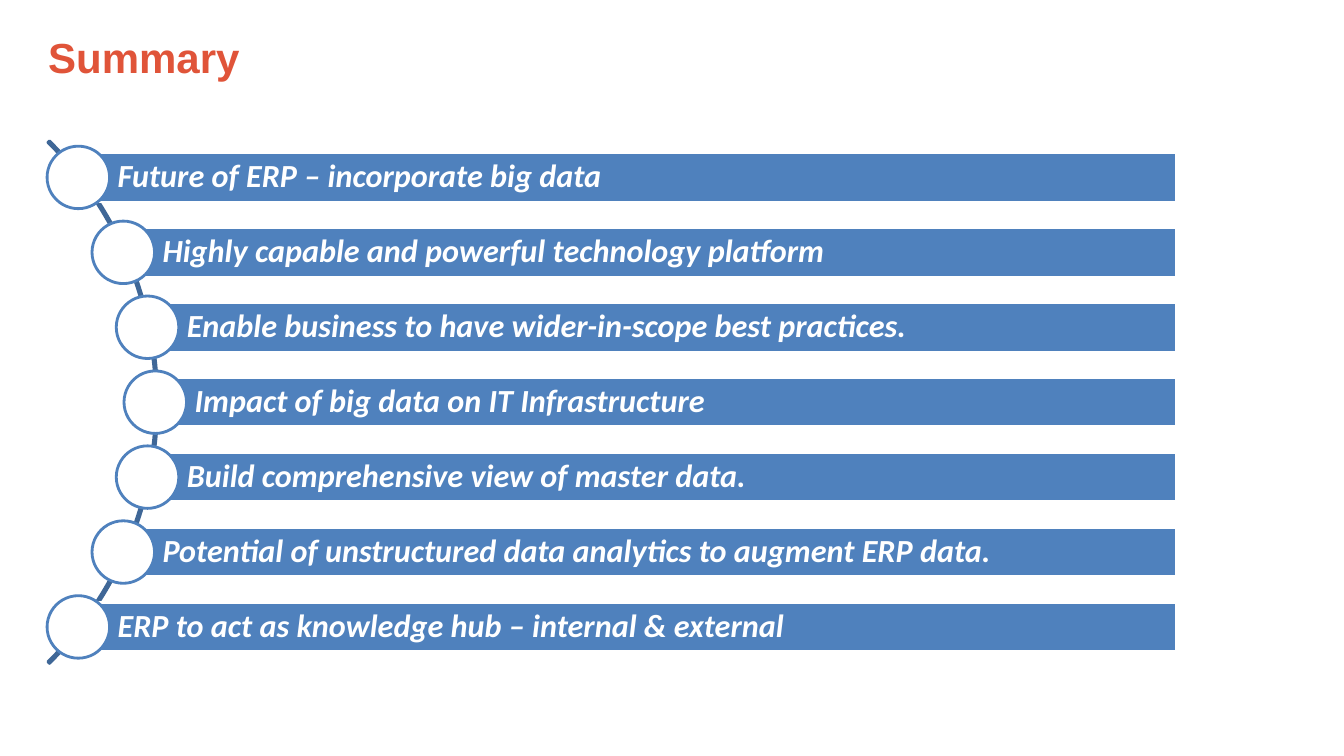
import math

import pptx
import pptx.dml.color
import pptx.enum.shapes
import pptx.enum.text
import pptx.util

Inches = pptx.util.Inches
Pt = pptx.util.Pt
MSO_SHAPE = pptx.enum.shapes.MSO_SHAPE

COLORS = {"title": "E05439", "bar": "4F81BD", "arc": "3F6797", "white": "FFFFFF"}

POINTS = [
    "Future of ERP – incorporate big data",
    "Highly capable and powerful technology platform",
    "Enable business to have wider-in-scope best practices.",
    "Impact of big data on IT Infrastructure",
    "Build comprehensive view of master data.",
    "Potential of unstructured data analytics to augment ERP data.",
    "ERP to act as knowledge hub – internal & external",
]

ARC_X, ARC_Y = -2.1, 3.99
ARC_SIZE = 7.33
MARKER_RADIUS = 3.64  # distance of the circle centers from the arc center
PITCH = 4.46 / (len(POINTS) - 1)
BAR_RIGHT, BAR_HEIGHT = 11.67, 0.49
CIRCLE_SIZE = 0.62


def rgb(name):
    return pptx.dml.color.RGBColor.from_string(COLORS[name])


def write_text(frame, text, *, font, size, color, italic=False,
               insets=(0.1, 0.05, 0.1, 0.05), line_spacing=1.0):
    frame.word_wrap = True
    frame.vertical_anchor = pptx.enum.text.MSO_ANCHOR.MIDDLE
    (frame.margin_left, frame.margin_top,
     frame.margin_right, frame.margin_bottom) = map(Inches, insets)
    paragraph = frame.paragraphs[0]
    paragraph.alignment = pptx.enum.text.PP_ALIGN.LEFT
    paragraph.line_spacing = line_spacing
    run = paragraph.add_run()
    run.text = text
    run.font.name = font
    run.font.size = Pt(size)
    run.font.bold = True
    run.font.italic = italic
    run.font.color.rgb = rgb(color)


def add_outlined(slide, kind, left, top, width, height, *, line, fill=None):
    shape = slide.shapes.add_shape(
        kind, Inches(left), Inches(top), Inches(width), Inches(height))
    shape.shadow.inherit = False
    if fill:
        shape.fill.solid()
        shape.fill.fore_color.rgb = rgb(fill)
    else:
        shape.fill.background()
    shape.line.color.rgb = rgb(line)
    shape.line.width = Pt(2)
    return shape


def add_title(slide, text):
    title = slide.shapes.add_textbox(Inches(0.38), 0, Inches(9.71), Inches(1.13))
    write_text(title.text_frame, text, font="Arial", size=30, color="title")


def add_arc(slide):
    arc = add_outlined(slide, MSO_SHAPE.BLOCK_ARC, ARC_X - ARC_SIZE / 2,
                       ARC_Y - ARC_SIZE / 2, ARC_SIZE, ARC_SIZE, line="arc")
    # Angles of 315 and 45 degrees, then the band thickness
    for index, value in enumerate((189, 27, 0.003)):
        arc.adjustments[index] = value


def add_point(slide, text, offset):
    """Add a bar and its circle, offset vertically from the arc center."""
    x = ARC_X + math.sqrt(MARKER_RADIUS ** 2 - offset ** 2)
    y = ARC_Y + offset
    bar = add_outlined(slide, MSO_SHAPE.RECTANGLE, x, y - BAR_HEIGHT / 2,
                       BAR_RIGHT - x, BAR_HEIGHT, line="white", fill="bar")
    write_text(bar.text_frame, text, font="Calibri", size=23, color="white",
               italic=True, insets=(0.39, 0.06, 0.06, 0.06), line_spacing=0.9)
    add_outlined(slide, MSO_SHAPE.OVAL, x - CIRCLE_SIZE / 2, y - CIRCLE_SIZE / 2,
                 CIRCLE_SIZE, CIRCLE_SIZE, line="bar", fill="white")


def main():
    deck = pptx.Presentation()
    deck.slide_width, deck.slide_height = Inches(13.33), Inches(7.5)
    slide = deck.slides.add_slide(deck.slide_layouts[6])
    add_title(slide, "Summary")
    add_arc(slide)
    middle = (len(POINTS) - 1) / 2
    for index, text in enumerate(POINTS):
        add_point(slide, text, (index - middle) * PITCH)
    deck.save("out.pptx")


if __name__ == "__main__":
    main()
